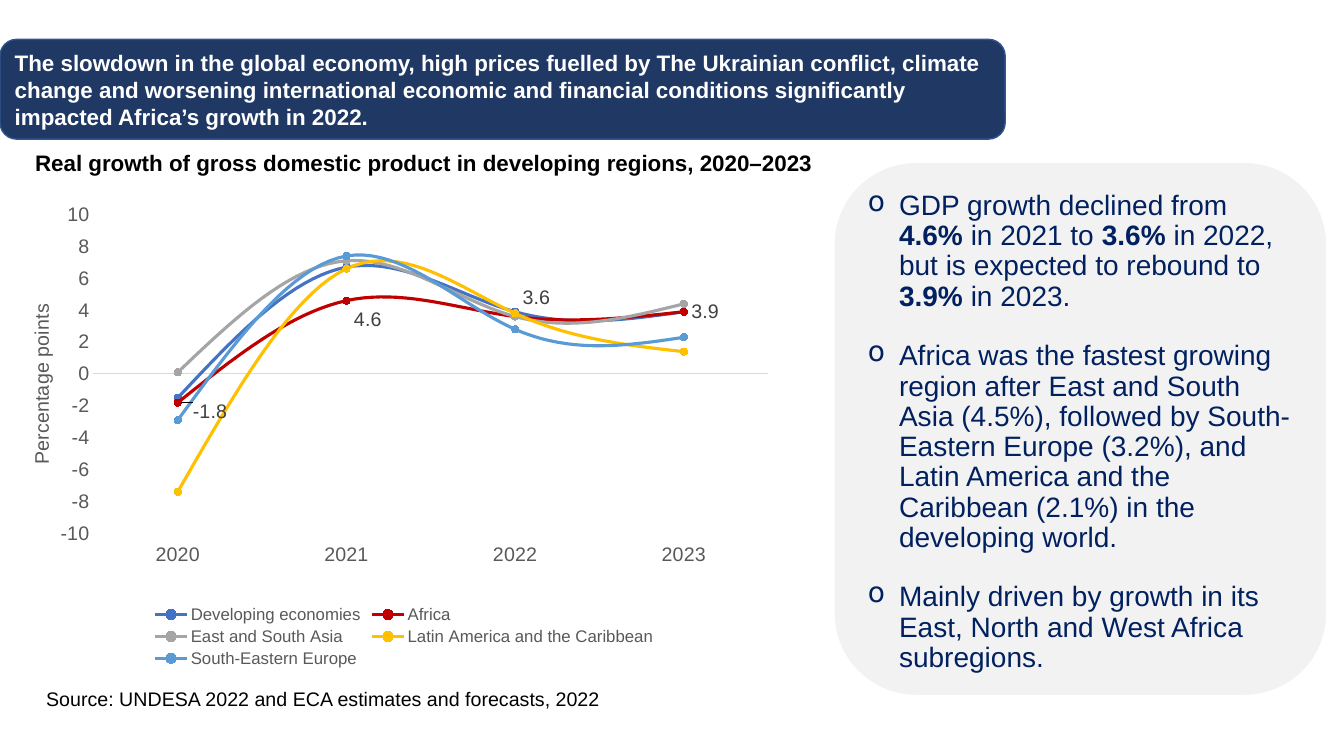
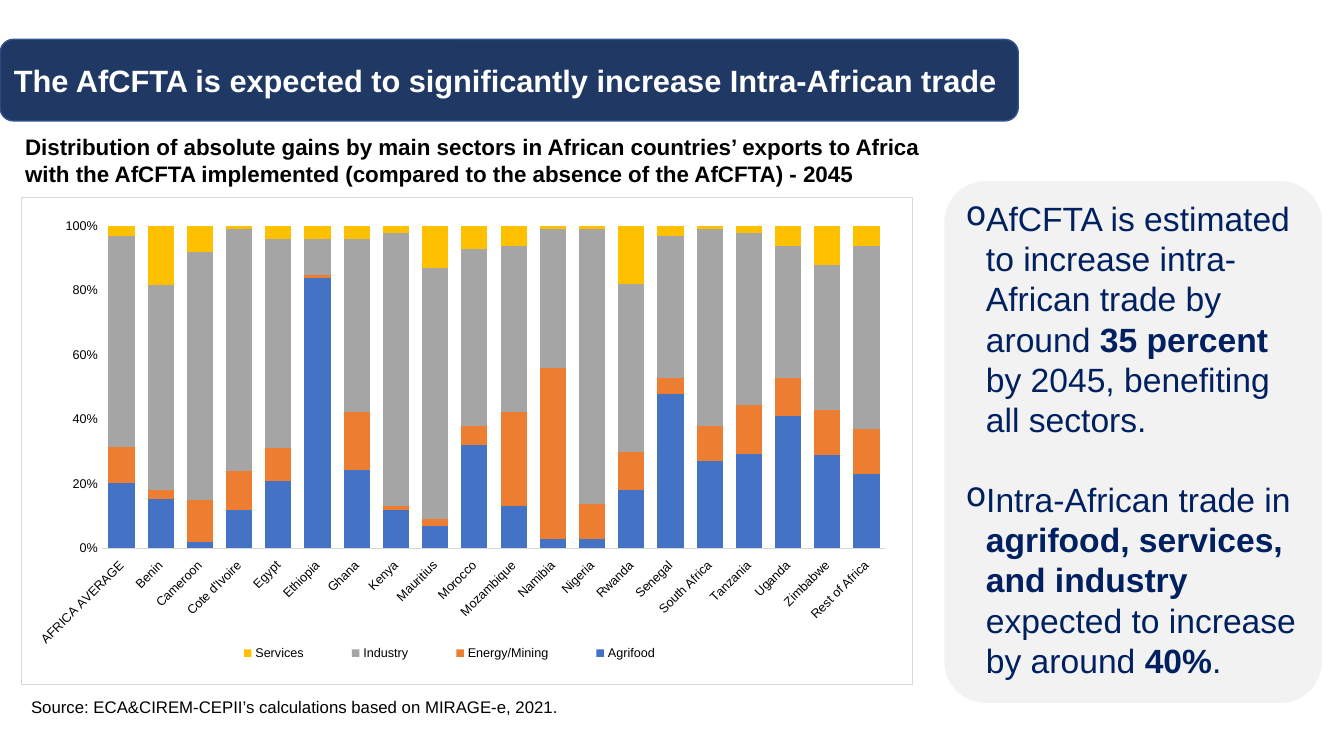
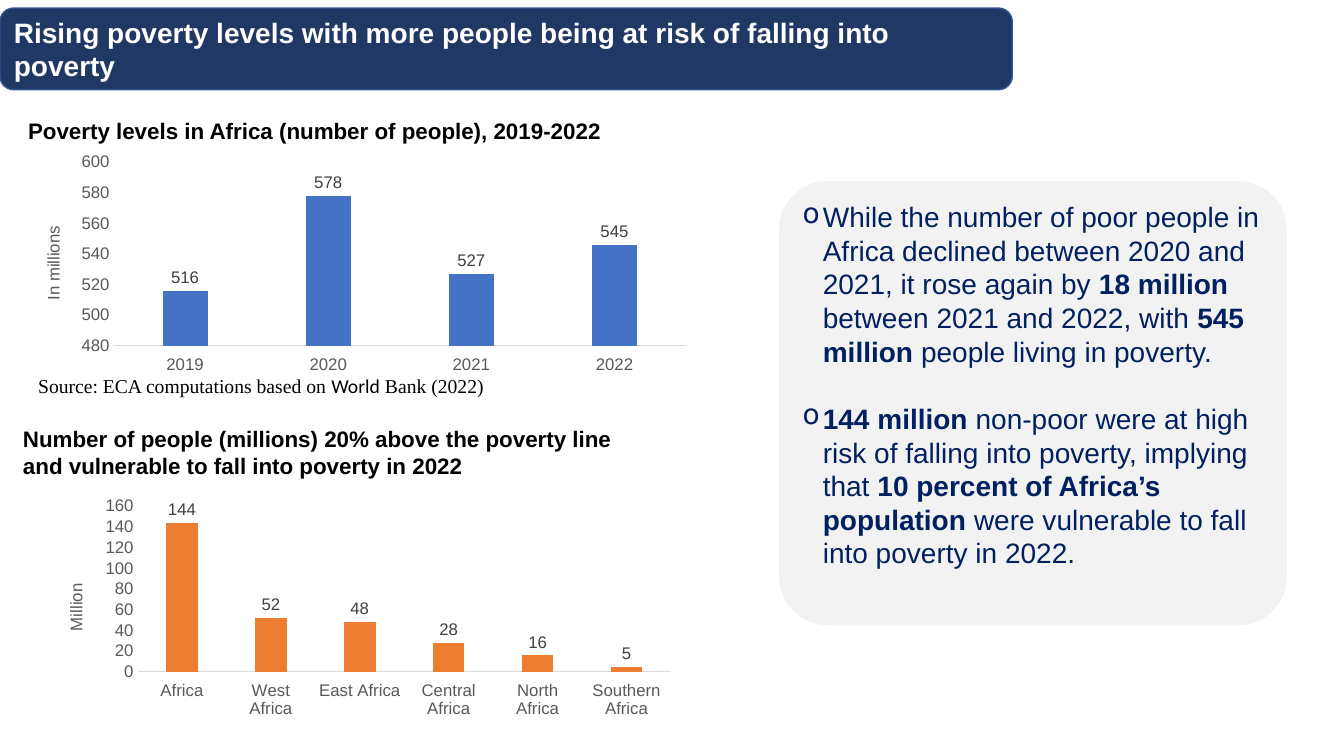
import lxml.etree
import pptx
import pptx.chart.data
import pptx.dml.color
import pptx.enum.chart
import pptx.enum.shapes
import pptx.enum.text
import pptx.oxml.ns
import pptx.util

RGBColor = pptx.dml.color.RGBColor
ChartType = pptx.enum.chart.XL_CHART_TYPE
LabelPosition = pptx.enum.chart.XL_LABEL_POSITION
LegendPosition = pptx.enum.chart.XL_LEGEND_POSITION
Anchor = pptx.enum.text.MSO_ANCHOR
qn = pptx.oxml.ns.qn

PX = 9144  # EMU in one px, 100 px to the inch
FONT = "Arial"

WHITE = RGBColor(0xFF, 0xFF, 0xFF)
BLACK = RGBColor(0x00, 0x00, 0x00)
BAND_FILL = RGBColor(0x20, 0x38, 0x64)
BAND_LINE = RGBColor(0x32, 0x54, 0x91)
PANEL_FILL = RGBColor(0xF2, 0xF2, 0xF2)
PANEL_TEXT = RGBColor(0x00, 0x20, 0x60)
AXIS_TEXT = RGBColor(0x59, 0x59, 0x59)
AXIS_LINE = RGBColor(0xD9, 0xD9, 0xD9)
LABEL_TEXT = RGBColor(0x40, 0x40, 0x40)
BLUE = RGBColor(0x44, 0x72, 0xC4)
RED = RGBColor(0xC0, 0x00, 0x00)
GRAY = RGBColor(0xA5, 0xA5, 0xA5)
YELLOW = RGBColor(0xFF, 0xC0, 0x00)
SKY = RGBColor(0x5B, 0x9B, 0xD5)
ORANGE = RGBColor(0xED, 0x7D, 0x31)


def px(*lengths):
    return [pptx.util.Emu(length * PX) for length in lengths]


def set_font(font, size, color, bold=False, name=FONT):
    font.size = pptx.util.Pt(size)
    font.color.rgb = color
    font.bold = bold
    font.name = name


def add_bullet(paragraph, indent):
    properties = paragraph._p.get_or_add_pPr()
    properties.set("marL", str(indent * PX))
    properties.set("indent", str(-indent * PX))
    lxml.etree.SubElement(properties, qn("a:buChar")).set("char", "o")


def write(shape, *texts, size, color=BLACK, bold=False, name=FONT, marked=None,
          anchor=Anchor.TOP, indent=0, gap=0, line_spacing=None):
    """Write paragraphs; parts between ** take the format in marked (bold if none)."""
    frame = shape.text_frame
    frame.word_wrap = True
    frame.vertical_anchor = anchor
    base = {"size": size, "color": color, "bold": bold, "name": name}
    special = {**base, **(marked or {"bold": True})}
    for number, text in enumerate(texts):
        paragraph = frame.add_paragraph() if number else frame.paragraphs[0]
        paragraph.alignment = pptx.enum.text.PP_ALIGN.LEFT
        if line_spacing:
            paragraph.line_spacing = line_spacing
        if number and gap:
            paragraph.space_before = pptx.util.Pt(gap)
        if indent:
            add_bullet(paragraph, indent)
        for part_number, part in enumerate(text.split("**")):
            if part:
                run = paragraph.add_run()
                run.text = part
                set_font(run.font, **(special if part_number % 2 else base))


def add_text(slide, box, text, **text_format):
    write(slide.shapes.add_textbox(*px(*box)), text, **text_format)


def add_heading(slide, box, text, **text_format):
    add_text(slide, box, text, size=16, bold=True, **text_format)


def add_round_box(slide, box, fill, line, corner=None):
    kind = pptx.enum.shapes.MSO_SHAPE.ROUNDED_RECTANGLE
    shape = slide.shapes.add_shape(kind, *px(*box))
    shape.shadow.inherit = False
    shape.fill.solid()
    shape.fill.fore_color.rgb = fill
    shape.line.color.rgb = line
    shape.line.width = pptx.util.Pt(1)
    if corner:
        shape.adjustments[0] = corner
    return shape


def add_title_band(slide, box, text, size):
    band = add_round_box(slide, box, BAND_FILL, BAND_LINE)
    write(band, text, size=size, color=WHITE, bold=True, anchor=Anchor.MIDDLE)


def add_panel(slide, box, *texts, corner=0.11, indent=20, **text_format):
    panel = add_round_box(slide, box, PANEL_FILL, WHITE, corner)
    write(panel, *texts, color=PANEL_TEXT, indent=indent, **text_format)


def make_layout(x, y, width=None, height=None, inner=False):
    """Build a manual layout; without a size, x and y are offsets or a title place."""
    layout = lxml.etree.Element(qn("c:layout"))
    manual = lxml.etree.SubElement(layout, qn("c:manualLayout"))
    values = []
    if inner:
        values.append(("layoutTarget", "inner"))
    if width:
        values += [("xMode", "edge"), ("yMode", "edge")]
    values += [("x", x), ("y", y)]
    if width:
        values += [("w", width), ("h", height)]
    for tag, value in values:
        lxml.etree.SubElement(manual, qn("c:" + tag)).set("val", str(value))
    return layout


def add_chart(slide, box, kind, categories, series, plot_box, size,
              scale, axis_color=AXIS_TEXT, axis_title=None, number_format="General"):
    """Add a chart; series holds (name, values, colour), scale (low, high, step)."""
    data = pptx.chart.data.CategoryChartData()
    data.categories = categories
    for name, values, _ in series:
        data.add_series(name, values)
    chart = slide.shapes.add_chart(kind, *px(*box), data).chart
    chart.has_title = False
    chart.has_legend = False
    set_font(chart.font, size, BLACK)
    chart.plots[0].vary_by_categories = False

    plot_area = chart._chartSpace.chart.plotArea
    for layout in plot_area.findall(qn("c:layout")):
        plot_area.remove(layout)
    plot_area.insert(0, make_layout(*plot_box, inner=True))

    value_axis, category_axis = chart.value_axis, chart.category_axis
    for axis in (value_axis, category_axis):
        axis.has_major_gridlines = False
        axis.major_tick_mark = pptx.enum.chart.XL_TICK_MARK.NONE
        set_font(axis.tick_labels.font, size, axis_color)
    value_axis.minimum_scale, value_axis.maximum_scale, value_axis.major_unit = scale
    value_axis.tick_labels.number_format = number_format
    value_axis.tick_labels.number_format_is_linked = False
    value_axis.format.line.fill.background()
    category_axis.tick_label_position = pptx.enum.chart.XL_TICK_LABEL_POSITION.LOW
    category_axis.format.line.color.rgb = AXIS_LINE
    category_axis.format.line.width = pptx.util.Pt(0.75)
    if axis_title:
        frame = value_axis.axis_title.text_frame
        frame.text = axis_title
        frame._txBody.bodyPr.set("rot", "-5400000")
        frame._txBody.bodyPr.set("vert", "horz")
        set_font(frame.paragraphs[0].runs[0].font, size, axis_color)

    for plotted, (_, _, color) in zip(chart.plots[0].series, series):
        if kind == ChartType.LINE_MARKERS:
            plotted.smooth = True
            plotted.format.line.color.rgb = color
            plotted.format.line.width = pptx.util.Pt(2.25)
            plotted.marker.style = pptx.enum.chart.XL_MARKER_STYLE.CIRCLE
            plotted.marker.size = 5
            plotted.marker.format.fill.solid()
            plotted.marker.format.fill.fore_color.rgb = color
            plotted.marker.format.line.color.rgb = color
        else:
            plotted.format.fill.solid()
            plotted.format.fill.fore_color.rgb = color
    return chart


def add_legend(chart, position, size, color):
    chart.has_legend = True
    chart.legend.position = position
    chart.legend.include_in_layout = False
    set_font(chart.legend.font, size, color)


def show_values(series, size, position):
    labels = series.data_labels
    labels.show_value = True
    labels.position = position
    set_font(labels.font, size, LABEL_TEXT)


def add_growth_chart(slide, box):
    series = [
        ("Developing economies", (-1.5, 6.7, 3.9, 3.9), BLUE),
        ("Africa", (-1.8, 4.6, 3.6, 3.9), RED),
        ("East and South Asia", (0.1, 7.1, 3.6, 4.4), GRAY),
        ("Latin America and the Caribbean", (-7.4, 6.6, 3.8, 1.4), YELLOW),
        ("South-Eastern Europe", (-2.9, 7.4, 2.8, 2.3), SKY),
    ]
    chart = add_chart(
        slide, box, ChartType.LINE_MARKERS, ("2020", "2021", "2022", "2023"), series,
        (0.09, 0.04, 0.89, 0.67), 14, (-10, 10, 2),
        axis_title="Percentage points", number_format="#,##0")
    add_legend(chart, LegendPosition.BOTTOM, 12, AXIS_TEXT)

    africa = chart.plots[0].series[1]
    show_values(africa, 14, LabelPosition.RIGHT)
    label_offsets = [(0.01, 0.02), (0, 0.04), (0, -0.04)]
    for index in range(len(label_offsets)):
        label = africa.points[index].data_label
        set_font(label.font, 14, LABEL_TEXT)
        label.position = LabelPosition.RIGHT
    for element, offset in zip(africa._element.iter(qn("c:dLbl")), label_offsets):
        element.find(qn("c:idx")).addnext(make_layout(*offset))


def add_sector_chart(slide, box):
    categories = (
        "AFRICA AVERAGE", "Benin", "Cameroon", "Cote d'Ivoire", "Egypt", "Ethiopia",
        "Ghana", "Kenya", "Mauritius", "Morocco", "Mozambique", "Namibia", "Nigeria",
        "Rwanda", "Senegal", "South Africa", "Tanzania", "Uganda", "Zimbabwe",
        "Rest of Africa")
    series = [
        ("Agrifood", (20, 15, 2, 12, 21, 84, 24, 12, 7, 32, 13, 3, 3, 18, 48, 27, 29,
                      41, 29, 23), BLUE),
        ("Energy/Mining", (11, 3, 13, 12, 10, 1, 18, 1, 2, 6, 29, 53, 11, 12, 5, 11,
                           15, 12, 14, 14), ORANGE),
        ("Industry", (65, 63, 77, 75, 65, 11, 53, 85, 78, 55, 51, 43, 86, 52, 44, 61,
                      53, 41, 45, 57), GRAY),
        ("Services", (3, 18, 8, 1, 4, 4, 4, 2, 13, 7, 6, 1, 1, 18, 3, 1, 2, 6, 12, 6),
         YELLOW),
    ]
    chart = add_chart(
        slide, box, ChartType.COLUMN_STACKED_100, categories, series,
        (0.09, 0.06, 0.88, 0.66), 9, (0, 1, 0.2), axis_color=BLACK, number_format="0%")
    chart.plots[0].gap_width = 50
    chart.plots[0].overlap = 100
    label_body = chart.category_axis._element.find(qn("c:txPr")).find(qn("a:bodyPr"))
    label_body.set("rot", "-2700000")
    add_legend(chart, LegendPosition.RIGHT, 9, BLACK)
    legend_place = chart.legend._element.find(qn("c:legendPos"))
    legend_place.addnext(make_layout(0.2, 0.9, 0.56, 0.07))

    frame = lxml.etree.Element(qn("c:spPr"))
    fill = lxml.etree.SubElement(frame, qn("a:solidFill"))
    lxml.etree.SubElement(fill, qn("a:srgbClr")).set("val", str(WHITE))
    line = lxml.etree.SubElement(frame, qn("a:ln"))
    line.set("w", str(pptx.util.Pt(0.75)))
    line_fill = lxml.etree.SubElement(line, qn("a:solidFill"))
    lxml.etree.SubElement(line_fill, qn("a:srgbClr")).set("val", str(AXIS_LINE))
    chart._chartSpace.chart.addnext(frame)


def add_column_chart(slide, box, categories, values, color, plot_box, scale,
                     axis_title, gap_width, overlap=0):
    chart = add_chart(
        slide, box, ChartType.COLUMN_CLUSTERED, categories,
        [("Series 1", values, color)], plot_box, 12, scale, axis_title=axis_title)
    chart.plots[0].gap_width = gap_width
    chart.plots[0].overlap = overlap
    columns = chart.plots[0].series[0]
    show_values(columns, 12, LabelPosition.OUTSIDE_END)
    return columns


def build_growth_slide(slide):
    add_title_band(
        slide, (0, 39, 997, 99),
        "The slowdown in the global economy, high prices fuelled by The Ukrainian "
        "conflict, climate change and worsening international economic and financial "
        "conditions significantly impacted Africa’s growth in 2022.", 16)
    add_panel(
        slide, (827, 161, 489, 529),
        "GDP growth declined from **4.6%** in 2021 to **3.6%** in 2022, but is "
        "expected to rebound to **3.9%** in 2023.",
        "Africa was the fastest growing region after East and South Asia (4.5%), "
        "followed by South-Eastern Europe (3.2%), and Latin America and the Caribbean "
        "(2.1%) in the developing world.",
        "Mainly driven by growth in its East, North and West Africa subregions.",
        corner=None, indent=31, size=20, gap=21, line_spacing=0.9)
    add_text(slide, (36, 677, 667, 34),
             "Source: UNDESA 2022 and ECA estimates and forecasts, 2022", size=14)
    add_growth_chart(slide, (25, 194, 752, 472))
    add_heading(slide, (25, 143, 793, 37),
                "Real growth of gross domestic product in developing regions, 2020–2023")


def build_trade_slide(slide):
    add_title_band(
        slide, (0, 39, 1010, 81),
        "The AfCFTA is expected to significantly increase Intra-African trade", 22)
    add_sector_chart(slide, (21, 195, 885, 485))
    add_heading(
        slide, (15, 127, 922, 64),
        "Distribution of absolute gains by main sectors in African countries’ exports "
        "to Africa with the AfCFTA implemented (compared to the absence of the AfCFTA) "
        "- 2045", anchor=Anchor.MIDDLE)
    add_panel(
        slide, (936, 179, 376, 519),
        "AfCFTA is estimated to increase intra-African trade by around **35 percent "
        "**by 2045, benefiting all sectors.",
        "Intra-African trade in **agrifood, services, and industry **expected to "
        "increase by around **40%**.",
        size=24, gap=28)
    add_text(slide, (21, 686, 1027, 30),
             "Source: ECA&CIREM-CEPII’s calculations based on MIRAGE-e, 2021.", size=12)


def build_poverty_slide(slide):
    add_title_band(
        slide, (0, 8, 1004, 81),
        "Rising poverty levels with more people being at risk of falling into poverty",
        20)
    poor = add_column_chart(
        slide, (18, 145, 676, 264), ("2019", "2020", "2021", "2022"),
        (516, 578, 527, 546), BLUE, (0.14, 0.06, 0.84, 0.69), (480, 600, 20),
        "In millions", 219, -27)
    latest_label = poor.points[3].data_label
    latest_label.text_frame.text = "545"
    latest_run = latest_label.text_frame.paragraphs[0].runs[0]
    set_font(latest_run.font, 12, LABEL_TEXT)
    latest_label.position = LabelPosition.OUTSIDE_END
    add_heading(slide, (18, 111, 666, 37),
                "Poverty levels in Africa (number of people), 2019-2022")
    add_column_chart(
        slide, (-40, 491, 735, 225),
        ("Africa", "West Africa", "East Africa", "Central Africa", "North Africa",
         "Southern Africa"),
        (144, 52, 48, 28, 16, 5), ORANGE, (0.24, 0.05, 0.72, 0.73), (0, 160, 20),
        "Million", 182)
    add_heading(
        slide, (13, 417, 614, 64),
        "Number of people (millions) 20% above the poverty line and vulnerable to fall "
        "into poverty in 2022")
    add_panel(
        slide, (772, 179, 505, 442),
        "While the number of poor people in Africa declined between 2020 and 2021, it "
        "rose again by **18 million **between 2021 and 2022, with **545 million "
        "**people living in poverty.",
        "**144 million **non-poor were at high risk of falling into poverty, implying "
        "that **10 percent of Africa’s population **were vulnerable to fall into "
        "poverty in 2022.",
        size=20, gap=24)
    add_text(slide, (28, 366, 666, 34),
             "Source: ECA computations based on **World** Bank (2022)", size=14,
             name="Times New Roman", marked={"name": "Calibri"})


def main():
    presentation = pptx.Presentation()
    presentation.slide_width, presentation.slide_height = px(1333, 750)
    blank = presentation.slide_layouts[6]
    for build in (build_growth_slide, build_trade_slide, build_poverty_slide):
        build(presentation.slides.add_slide(blank))
    presentation.save("out.pptx")


if __name__ == "__main__":
    main()
